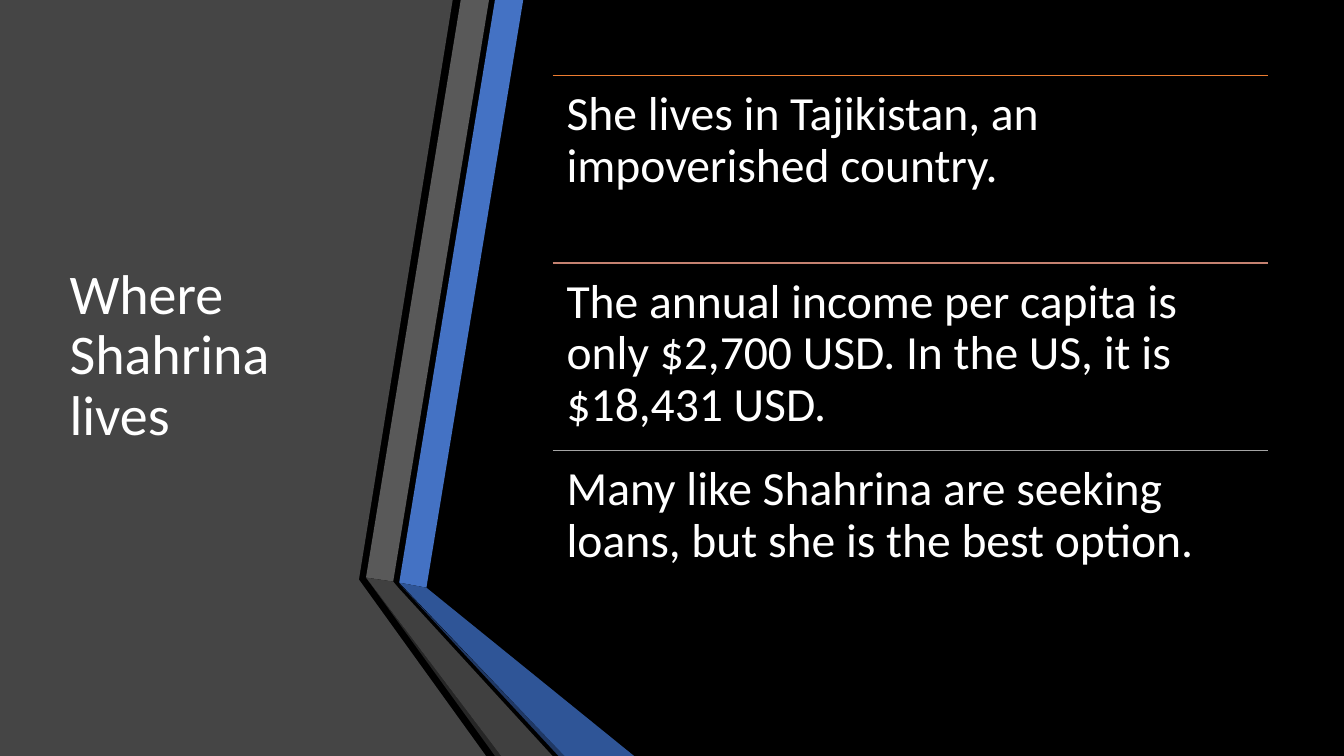
import pptx
import pptx.dml.color
import pptx.enum.shapes
import pptx.enum.text
import pptx.oxml
import pptx.util

Inches = pptx.util.Inches
Pt = pptx.util.Pt
RGBColor = pptx.dml.color.RGBColor
ANCHOR = pptx.enum.text.MSO_ANCHOR

BLACK = RGBColor(0x00, 0x00, 0x00)
WHITE = RGBColor(0xFF, 0xFF, 0xFF)
PANEL_GRAY = RGBColor(0x45, 0x45, 0x45)
BLUE = RGBColor(0x44, 0x72, 0xC4)
BLUE_FOLD = RGBColor(0x2F, 0x55, 0x97)
BLUE_EDGE = RGBColor(0x20, 0x38, 0x64)
GRAY = RGBColor(0x59, 0x59, 0x59)
GRAY_FOLD = RGBColor(0x40, 0x40, 0x40)
GRAY_EDGE = RGBColor(0x26, 0x26, 0x26)
ORANGE = RGBColor(0xED, 0x7D, 0x31)
ROSE = RGBColor(0xC4, 0x81, 0x70)
SILVER = RGBColor(0xA5, 0xA5, 0xA5)

FONT = "Calibri"
TITLE = "Where Shahrina lives"
FACTS = [
    ("She lives in Tajikistan, an impoverished country.", ORANGE),
    ("The annual\u00a0income per capita is only $2,700 USD. In the US, it is $18,431 USD.", ROSE),
    ("Many like Shahrina\u00a0are seeking loans, but\u00a0she is the best option.", SILVER),
]

# Folded ribbons, back to front: colour and corner points in inches
RIBBONS = [
    (PANEL_GRAY, [(0, 0), (4.49, 0), (3.56, 5.75), (4.82, 7.5), (0, 7.5)]),
    (BLUE, [(3.96, 5.78), (4.23, 5.83), (5.19, 0), (4.91, 0)]),
    (GRAY, [(4.85, 0), (4.57, 0), (3.63, 5.73), (3.9, 5.77)]),
    (GRAY_EDGE, [(3.63, 5.73), (4.91, 7.5), (4.97, 7.5)]),
    (BLUE_EDGE, [(3.96, 5.79), (5.54, 7.5), (5.6, 7.5)]),
    (BLUE_FOLD, [(3.96, 5.78), (5.6, 7.5), (6.29, 7.5), (4.23, 5.83)]),
    (GRAY_FOLD, [(5.48, 7.5), (3.95, 5.83), (3.9, 5.77), (3.63, 5.73), (4.97, 7.5)]),
]

FACT_LEFT, FACT_TOP = 5.48, 0.75
FACT_WIDTH, FACT_HEIGHT = 7.1, 1.86


def add_ribbon(slide, color, corners):
    points = [(Inches(x), Inches(y)) for x, y in corners]
    builder = slide.shapes.build_freeform(*points[0])
    builder.add_line_segments(points[1:], close=True)
    ribbon = builder.convert_to_shape()
    ribbon.shadow.inherit = False
    ribbon.fill.solid()
    ribbon.fill.fore_color.rgb = color
    ribbon.line.fill.background()


def add_rule(slide, top, color):
    rule = slide.shapes.add_connector(
        pptx.enum.shapes.MSO_CONNECTOR.STRAIGHT,
        Inches(FACT_LEFT), Inches(top), Inches(FACT_LEFT + FACT_WIDTH), Inches(top))
    rule.line.color.rgb = color
    rule.line.width = Pt(1)
    rule._element.spPr.append(pptx.oxml.parse_xml(
        '<a:effectLst xmlns:a="http://schemas.openxmlformats.org/drawingml/2006/main"/>'))


def write_text(shape, text, size, anchor, inset_x, inset_y):
    frame = shape.text_frame
    frame.word_wrap = True
    frame.auto_size = pptx.enum.text.MSO_AUTO_SIZE.NONE
    frame.vertical_anchor = anchor
    frame.margin_left = frame.margin_right = Inches(inset_x)
    frame.margin_top = frame.margin_bottom = Inches(inset_y)
    frame.text = text
    paragraph = frame.paragraphs[0]
    paragraph.alignment = pptx.enum.text.PP_ALIGN.LEFT
    paragraph.line_spacing = 0.9
    font = paragraph.runs[0].font
    font.name = FONT
    font.size = Pt(size)
    font.color.rgb = WHITE


def main():
    deck = pptx.Presentation()
    deck.slide_width, deck.slide_height = Inches(13.33), Inches(7.5)
    slide = deck.slides.add_slide(deck.slide_layouts[5])
    slide.background.fill.solid()
    slide.background.fill.fore_color.rgb = BLACK

    for color, corners in RIBBONS:
        add_ribbon(slide, color, corners)

    title = slide.shapes.title
    title.left, title.top = Inches(0.59), Inches(0.75)
    title.width, title.height = Inches(3.04), Inches(5.58)
    write_text(title, TITLE, size=40, anchor=ANCHOR.MIDDLE, inset_x=0.1, inset_y=0.05)
    slide.shapes._spTree.append(title._element)  # bring in front of the panel

    for row, (text, color) in enumerate(FACTS):
        top = FACT_TOP + row * FACT_HEIGHT
        add_rule(slide, top, color)
        fact = slide.shapes.add_textbox(
            Inches(FACT_LEFT), Inches(top), Inches(FACT_WIDTH), Inches(FACT_HEIGHT))
        write_text(fact, text, size=34, anchor=ANCHOR.TOP, inset_x=0.14, inset_y=0.14)

    deck.save("out.pptx")


if __name__ == "__main__":
    main()
